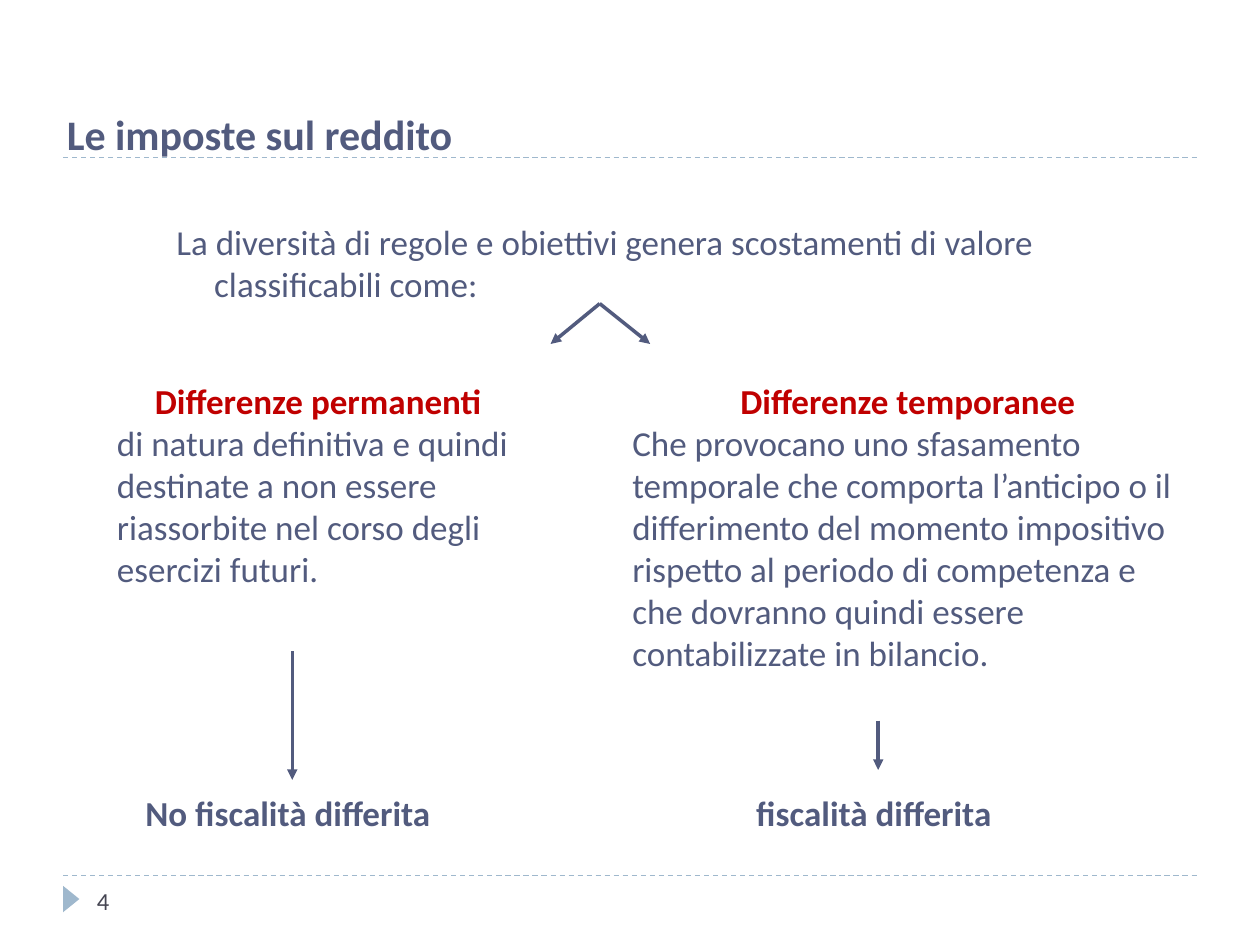
from dataclasses import dataclass

from lxml import etree
from pptx import Presentation
from pptx import util as u
from pptx.dml.color import RGBColor
from pptx.enum import dml, shapes, text
from pptx.oxml.ns import qn


@dataclass(frozen=True)
class Theme:
    """Colours, font and type sizes of the slide."""
    ink: str = "525B7E"
    red: str = "C00000"
    rule: str = "9FB8CD"
    gray: str = "464653"
    font: str = "Calibri"
    head: int = 24
    body: int = 20
    page: int = 14


T = Theme()
WIDE, HIGH = u.Inches(10), u.Inches(7.5)
MID = text.PP_ALIGN.CENTER


def area(x, y, w, h):
    """Turn percent shares of the slide into lengths."""
    return [round(n * side / 100) for n, side in zip((x, y, w, h), (WIDE, HIGH) * 2)]


def place(box, spot):
    """Move a placeholder to its spot."""
    box.left, box.top, box.width, box.height = area(*spot)
    return box


def write(box, *lines, size=T.body, color=T.ink, bold=False, align=None,
          space=None, hang=0, anchor=text.MSO_ANCHOR.TOP):
    """Fill a box with lines; a line may be a (text, format) pair."""
    frame = box.text_frame
    frame.word_wrap = True
    frame.auto_size = text.MSO_AUTO_SIZE.NONE
    frame.vertical_anchor = anchor
    base = {"color": color, "bold": bold, "align": align}
    for i, line in enumerate(lines):
        words, extra = line if isinstance(line, tuple) else (line, {})
        look = {**base, **extra}
        para = frame.paragraphs[0] if i == 0 else frame.add_paragraph()
        para.alignment = look["align"] or text.PP_ALIGN.LEFT
        para.space_before = u.Pt(0)
        para.line_spacing = space
        props = para._p.get_or_add_pPr()
        props.set("marL", str(u.Inches(hang)))
        props.set("indent", str(-u.Inches(hang)))
        etree.SubElement(props, qn("a:buNone"))
        run = para.add_run()
        run.text = words
        font = run.font
        font.name, font.size, font.bold = T.font, u.Pt(size), look["bold"]
        font.color.rgb = RGBColor.from_string(look["color"])


def label(slide, spot, *lines, **look):
    """Add a text box."""
    write(slide.shapes.add_textbox(*area(*spot)), *lines, **look)


def link(home, x1, y1, x2, y2, color=T.ink, width=2, dash=False, head=True):
    """Add a straight line, by default an arrow."""
    line = home.add_connector(shapes.MSO_CONNECTOR.STRAIGHT, *area(x1, y1, x2, y2))
    line.line.color.rgb = RGBColor.from_string(color)
    line.line.width = u.Pt(width)
    if dash:
        line.line.dash_style = dml.MSO_LINE.DASH
    if head:
        etree.SubElement(line.line._get_or_add_ln(), qn("a:tailEnd"), type="triangle")
    etree.SubElement(line._element.spPr, qn("a:effectLst"))


def mark(slide, spot):
    """Add the page marker."""
    tri = slide.shapes.add_shape(shapes.MSO_SHAPE.ISOSCELES_TRIANGLE, *area(*spot))
    tri.rotation = 90
    tri.shadow.inherit = False
    tri.fill.solid()
    tri.fill.fore_color.rgb = RGBColor.from_string(T.rule)
    tri.line.fill.background()


def main():
    """Build and save the slide."""
    deck = Presentation()
    deck.slide_width, deck.slide_height = WIDE, HIGH
    slide = deck.slides.add_slide(deck.slide_layouts[1])
    for y in (92.67, 16.67):
        link(slide.shapes, 5, y, 95, y, color=T.rule, width=0.75, dash=True, head=False)
    mark(slide, (4.6, 94.27, 2.1, 1.73))
    label(slide, (6.7, 92.67, 21.7, 5.33), "4", size=T.page, color=T.gray,
          anchor=text.MSO_ANCHOR.MIDDLE)

    title, body = slide.placeholders
    write(place(title, (4.3, 10.8, 89.1, 6.67)), "Le imposte sul reddito",
          size=T.head, bold=True)
    write(place(body, (13, 22.67, 74.8, 23.07)),
          "La diversità di regole e obiettivi genera scostamenti di valore "
          "classificabili come:", hang=0.3)

    top = {"color": T.red, "bold": True, "align": MID}
    label(slide, (8.3, 39.47, 33.9, 20.93), ("Differenze permanenti", top),
          "di natura definitiva e quindi destinate a non essere riassorbite "
          "nel corso degli esercizi futuri.")
    label(slide, (49.2, 39.47, 45.7, 26.27), ("Differenze temporanee", top),
          "Che provocano uno sfasamento temporale che comporta l’anticipo o il "
          "differimento del momento impositivo rispetto al periodo di competenza "
          "e che dovranno quindi essere contabilizzate in bilancio.")
    for x, words in ((5.9, "No fiscalità differita"), (52.4, "fiscalità differita")):
        label(slide, (x, 83.6, 33.9, 5.2), words, bold=True, align=MID,
              space=0.9, hang=0.38)

    link(slide.shapes, 69.7, 76.27, 69.7, 81.47)
    link(slide.shapes, 23.2, 68.93, 23.2, 82.53)
    fork = slide.shapes.add_group_shape().shapes
    for x in (43.7, 51.6):
        link(fork, 47.6, 32.13, x, 36.4)
    deck.save("out.pptx")


if __name__ == "__main__":
    main()
